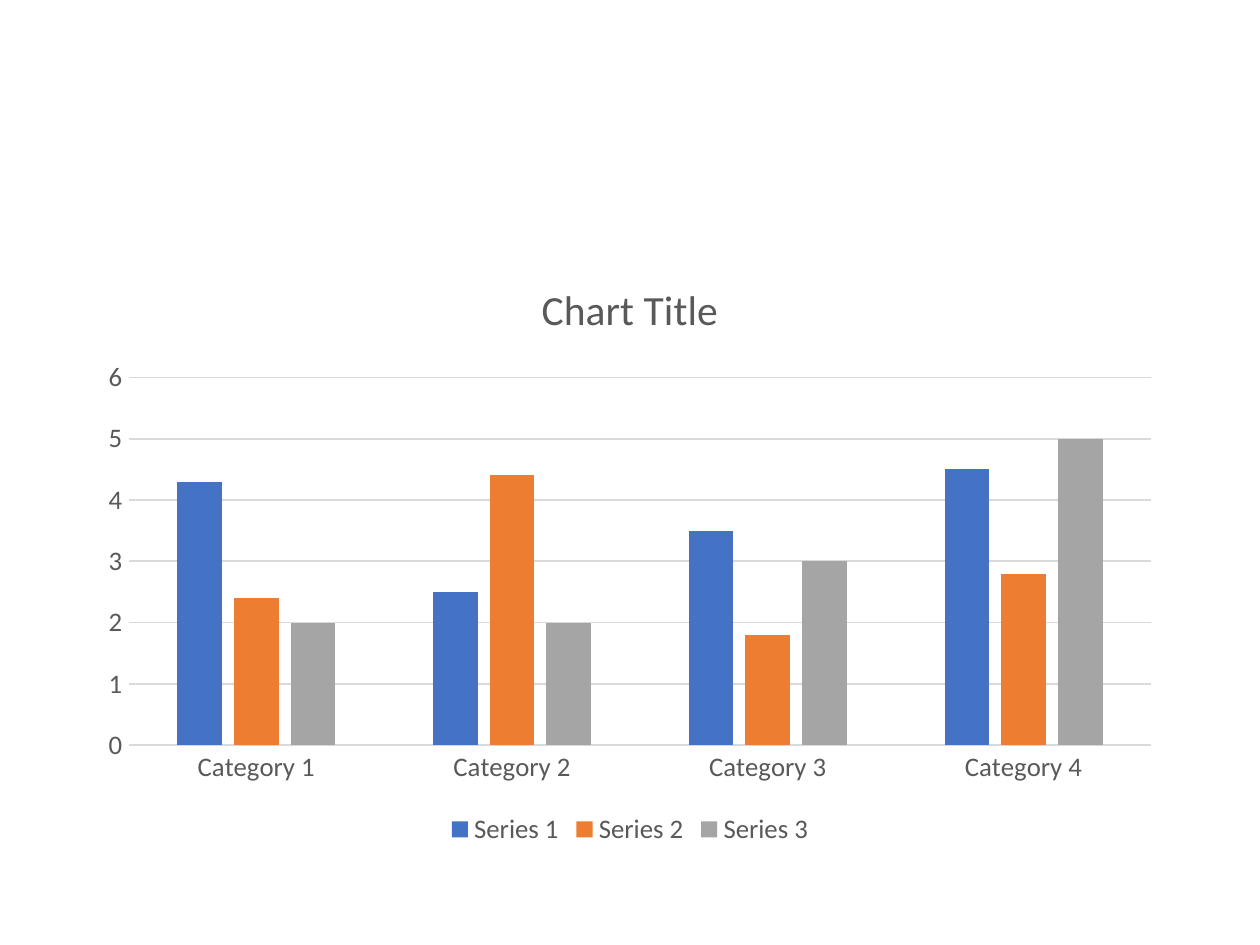
from pptx import Presentation
from pptx.chart.data import CategoryChartData
from pptx.dml.color import RGBColor
from pptx.enum.chart import XL_CHART_TYPE, XL_LEGEND_POSITION, XL_TICK_MARK
from pptx.util import Pt

CLUSTERED = XL_CHART_TYPE.COLUMN_CLUSTERED
LEGEND_BOTTOM = XL_LEGEND_POSITION.BOTTOM
NO_TICKS = XL_TICK_MARK.NONE

TEXT_GREY = "595959"
LINE_GREY = "D9D9D9"
CATEGORIES = ["Category 1", "Category 2", "Category 3", "Category 4"]
SERIES = [
    ("Series 1", [4.3, 2.5, 3.5, 4.5], "4472C4"),
    ("Series 2", [2.4, 4.4, 1.8, 2.8], "ED7D31"),
    ("Series 3", [2, 2, 3, 5], "A5A5A5"),
]


def color(hex_string):
    return RGBColor.from_string(hex_string)


def style_font(font, size):
    font.name = "Calibri"
    font.size = Pt(size)
    font.bold = False
    font.color.rgb = color(TEXT_GREY)


deck = Presentation()
deck.slide_width = Pt(564.5)
deck.slide_height = Pt(423.4)
slide = deck.slides.add_slide(deck.slide_layouts[6])

chart_data = CategoryChartData()
chart_data.categories = CATEGORIES
for name, values, _ in SERIES:
    chart_data.add_series(name, values)

chart = slide.shapes.add_chart(
    CLUSTERED, Pt(38.9), Pt(113), Pt(486.7), Pt(268.6), chart_data
).chart
style_font(chart.font, 12)

# Title and legend
chart.has_title = True
title_para = chart.chart_title.text_frame.paragraphs[0]
title_para.text = "Chart Title"
style_font(title_para.runs[0].font, 18.6)
chart.chart_title.include_in_layout = False

chart.has_legend = True
chart.legend.position = LEGEND_BOTTOM
chart.legend.include_in_layout = False
style_font(chart.legend.font, 12)

# Columns
plot = chart.plots[0]
plot.vary_by_categories = False
plot.gap_width = 219
plot.overlap = -27
for series, (_, _, fill_color) in zip(plot.series, SERIES):
    series.format.fill.solid()
    series.format.fill.fore_color.rgb = color(fill_color)

# Axes
category_axis = chart.category_axis
value_axis = chart.value_axis
for axis in (category_axis, value_axis):
    axis.major_tick_mark = NO_TICKS
    axis.minor_tick_mark = NO_TICKS
    style_font(axis.tick_labels.font, 12)

value_axis.minimum_scale = 0
value_axis.maximum_scale = 6
value_axis.major_unit = 1
value_axis.has_major_gridlines = True
value_axis.format.line.fill.background()
for line in (category_axis.format.line, value_axis.major_gridlines.format.line):
    line.color.rgb = color(LINE_GREY)
    line.width = Pt(0.75)

deck.save("out.pptx")
